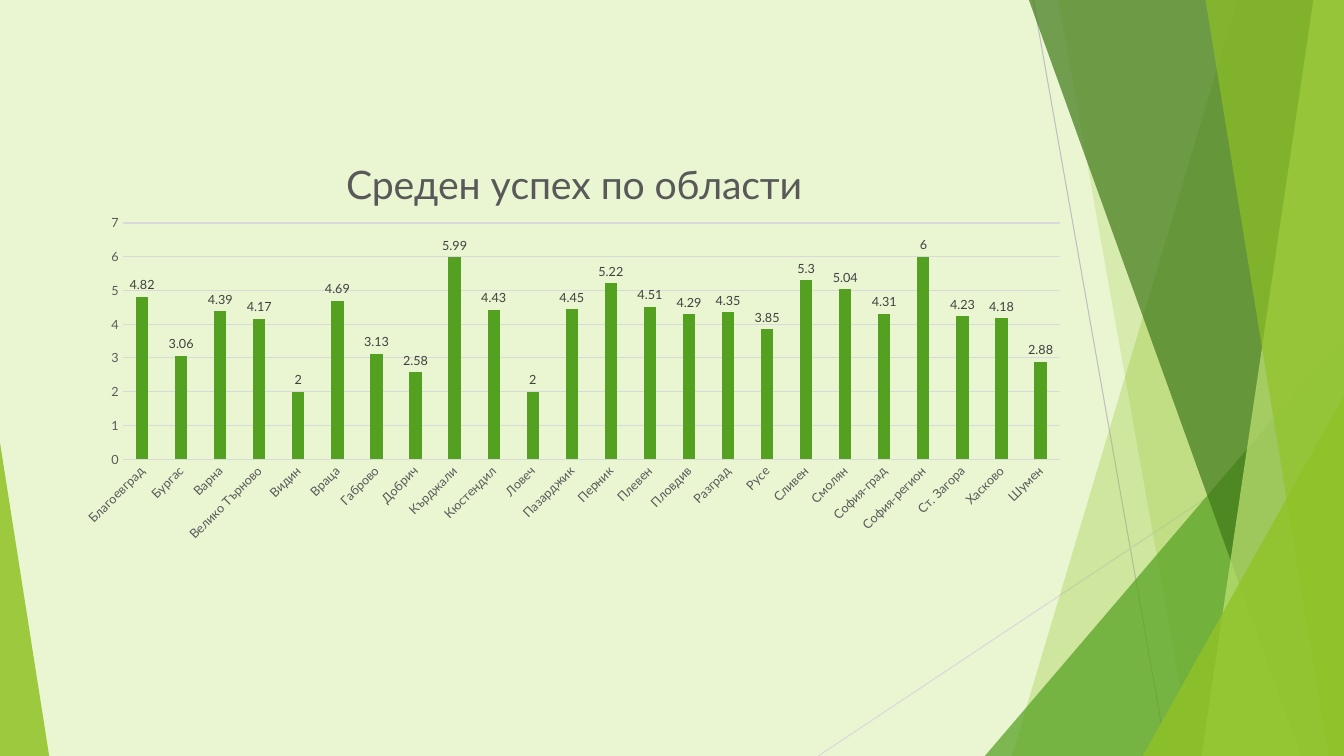
from dataclasses import dataclass

from lxml import etree
from pptx import Presentation
from pptx import util as u
from pptx.chart.data import CategoryChartData
from pptx.dml.color import RGBColor
from pptx.enum import chart as ch, shapes
from pptx.oxml import parse_xml
from pptx.oxml.ns import nsdecls, qn

WIDTH, HEIGHT = 33.87, 19.05

SCORES = {
    "Благоевград": 4.82, "Бургас": 3.06, "Варна": 4.39, "Велико Търново": 4.17,
    "Видин": 2, "Враца": 4.69, "Габрово": 3.13, "Добрич": 2.58,
    "Кърджали": 5.99, "Кюстендил": 4.43, "Ловеч": 2, "Пазарджик": 4.45,
    "Перник": 5.22, "Плевен": 4.51, "Пловдив": 4.29, "Разград": 4.35,
    "Русе": 3.85, "Сливен": 5.3, "Смолян": 5.04, "София-град": 4.31,
    "София-регион": 6, "Ст. Загора": 4.23, "Хасково": 4.18, "Шумен": 2.88,
}


@dataclass(frozen=True)
class Theme:
    font: str = "Lato"
    background: str = "EAF6D1"
    lime: str = "90C226"
    green: str = "54A021"
    forest: str = "3F7819"
    pale: str = "C0E474"
    grey: str = "BFBFBF"
    rule: str = "D9D9D9"
    text: str = "595959"
    label: str = "404040"
    title_size: int = 28
    small_size: int = 9
    line_width: float = 0.75


class SlideBuilder:
    """Draws themed elements on one slide, with lengths in centimetres."""

    def __init__(self, slide, theme):
        self.slide, self.theme = slide, theme
        fill = slide.background.fill
        fill.solid()
        fill.fore_color.rgb = RGBColor.from_string(theme.background)

    def style_line(self, line, color):
        line.color.rgb = RGBColor.from_string(color)
        line.width = u.Pt(self.theme.line_width)

    def style_font(self, font, size, color):
        font.name, font.size, font.bold = self.theme.font, u.Pt(size), False
        font.color.rgb = RGBColor.from_string(color)

    def paint(self, shape, color, opacity):
        shape.shadow.inherit = False
        shape.fill.solid()
        shape.fill.fore_color.rgb = RGBColor.from_string(color)
        shape.line.fill.background()
        rgb = shape.fill._xPr.find(f".//{qn('a:srgbClr')}")
        etree.SubElement(rgb, qn("a:alpha")).set("val", str(opacity * 1000))

    def line(self, x1, y1, x2, y2, color):
        connector = self.slide.shapes.add_connector(
            shapes.MSO_CONNECTOR.STRAIGHT, *map(u.Cm, (x1, y1, x2, y2)))
        self.style_line(connector.line, color)
        etree.SubElement(connector._element.spPr, qn("a:effectLst"))

    def right_band(self, top_x, bottom_x, color, opacity):
        builder = self.slide.shapes.build_freeform(u.Cm(top_x), 0)
        corners = [(WIDTH, 0), (WIDTH, HEIGHT), (bottom_x, HEIGHT)]
        builder.add_line_segments([(u.Cm(x), u.Cm(y)) for x, y in corners])
        self.paint(builder.convert_to_shape(), color, opacity)

    def bottom_triangle(self, left, top, width, apex, color, opacity):
        shape = self.slide.shapes.add_shape(
            shapes.MSO_SHAPE.ISOSCELES_TRIANGLE,
            *map(u.Cm, (left, top, width, HEIGHT - top)))
        shape.adjustments[0] = apex
        self.paint(shape, color, opacity)

    def layout(self, **places):
        modes = "".join(f'<c:{axis}Mode val="edge"/>' for axis in "xy")
        values = "".join(f'<c:{k} val="{v}"/>' for k, v in places.items())
        target = '<c:layoutTarget val="inner"/>' if "w" in places else ""
        return parse_xml(f'<c:layout {nsdecls("c")}><c:manualLayout>{target}'
                         f'{modes}{values}</c:manualLayout></c:layout>')

    def place(self, element, after, **places):
        for old in element.findall(qn("c:layout")):
            element.remove(old)
        if after is None:
            element.insert(0, self.layout(**places))
        else:
            after.addnext(self.layout(**places))

    def column_chart(self, left, top, width, height, title, scores):
        theme = self.theme
        data = CategoryChartData()
        data.categories = list(scores)
        data.add_series("Series 1", list(scores.values()))
        chart = self.slide.shapes.add_chart(
            ch.XL_CHART_TYPE.COLUMN_CLUSTERED,
            *map(u.Cm, (left, top, width, height)), data).chart
        chart.has_legend = False
        self.style_font(chart.font, theme.small_size, theme.text)

        heading = chart.chart_title
        run = heading.text_frame.paragraphs[0].add_run()
        run.text = title
        self.style_font(run.font, theme.title_size, theme.text)
        heading.include_in_layout = False
        element = heading._element
        self.place(element, element.find(qn("c:tx")), x=0.27, y=0.06)
        self.place(chart._chartSpace.chart.plotArea, None,
                   x=0.057, y=0.234, w=0.923, h=0.553)

        categories, values = chart.category_axis, chart.value_axis
        for axis in (categories, values):
            axis.major_tick_mark = axis.minor_tick_mark = ch.XL_TICK_MARK.NONE
            self.style_font(axis.tick_labels.font, theme.small_size, theme.text)
        self.style_line(categories.format.line, theme.rule)
        categories._element.txPr.bodyPr.set("rot", "-2700000")
        values.format.line.fill.background()
        values.minimum_scale, values.maximum_scale, values.major_unit = 0, 7, 1
        self.style_line(values.major_gridlines.format.line, theme.rule)

        plot = chart.plots[0]
        plot.gap_width, plot.overlap = 219, -27
        plot.vary_by_categories = False
        fill = plot.series[0].format.fill
        fill.solid()
        fill.fore_color.rgb = RGBColor.from_string(theme.green)
        plot.has_data_labels = True
        labels = plot.data_labels
        labels.show_value = True
        labels.position = ch.XL_LABEL_POSITION.OUTSIDE_END
        self.style_font(labels.font, theme.small_size, theme.label)


def main():
    theme = Theme()
    presentation = Presentation()
    presentation.slide_width = u.Cm(WIDTH)
    presentation.slide_height = u.Cm(HEIGHT)
    slide = presentation.slides.add_slide(presentation.slide_layouts[6])
    builder = SlideBuilder(slide, theme)

    builder.line(26.04, 0, 29.41, HEIGHT, theme.grey)
    builder.line(WIDTH, 10.24, 20.62, HEIGHT, theme.rule)
    builder.right_band(31.19, 25.5, theme.lime, 30)
    builder.right_band(26.67, 30.05, theme.lime, 20)
    builder.bottom_triangle(24.82, 8.46, 9.05, 1, theme.green, 72)
    builder.right_band(25.93, 32.79, theme.forest, 70)
    builder.right_band(33.1, 30.28, theme.pale, 70)
    builder.right_band(30.38, 33.48, theme.lime, 65)
    builder.bottom_triangle(28.8, 9.98, 5.07, 1, theme.lime, 80)
    builder.bottom_triangle(0, 11.15, 1.24, 0, theme.lime, 85)
    builder.column_chart(1.63, 3.1, 25.6, 10.77, "Среден успех по области", SCORES)
    presentation.save("out.pptx")


if __name__ == "__main__":
    main()
